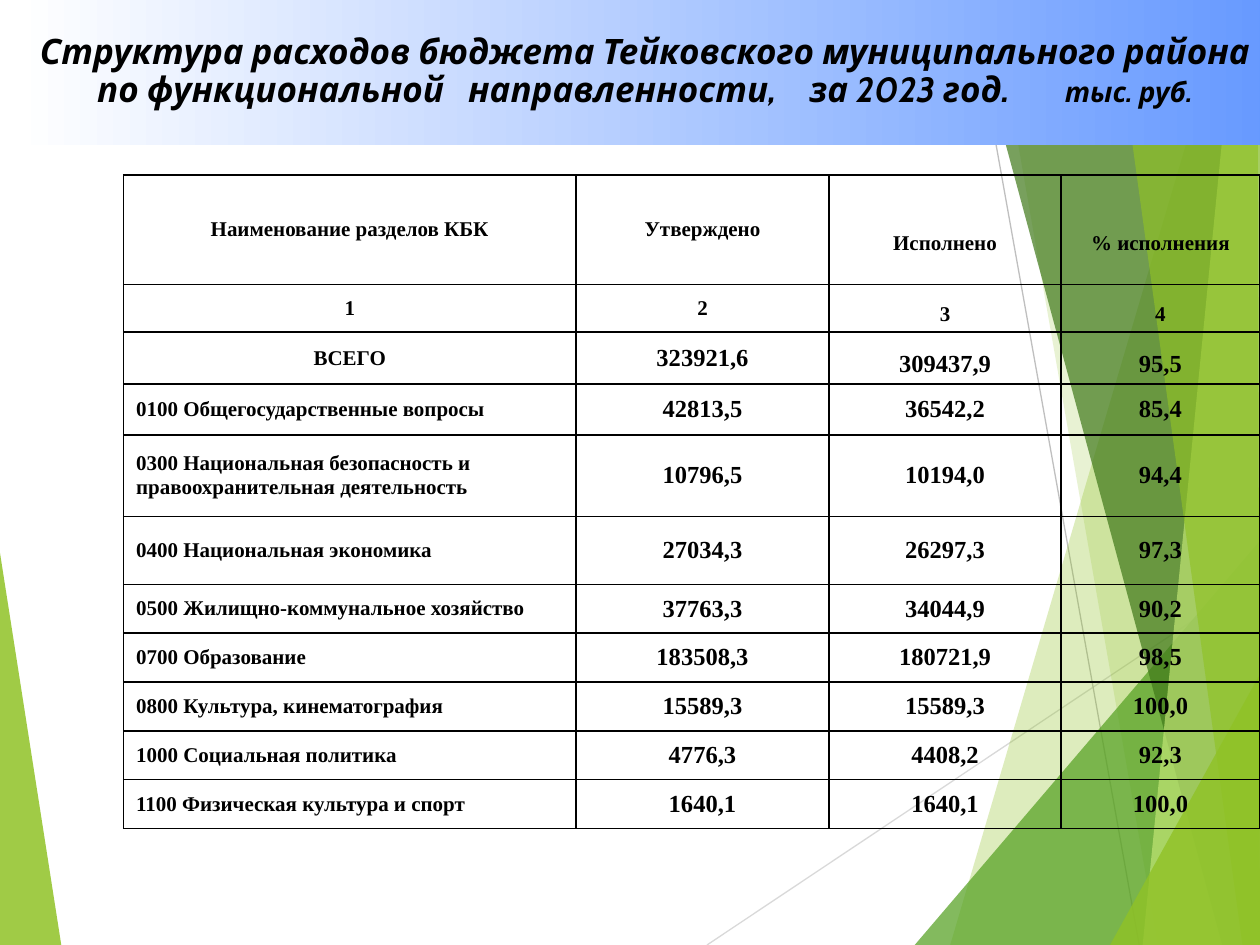
from lxml import etree
from pptx import Presentation
from pptx import util as u
from pptx.dml.color import RGBColor
from pptx.enum import shapes, text
from pptx.oxml.ns import qn

WIDTH, HEIGHT = 720, 540
COLORS = {
    "text": "000000", "white": "FFFFFF", "band": "6699FF",
    "lime": "90C226", "green": "54A021", "dark": "3F7819", "pale": "C0E474",
    "light gray": "D9D9D9", "gray": "BFBFBF",
}

# Outline points, colour, opacity in percent
FACETS_BACK = [
    ([(0, 316), (35, HEIGHT), (0, HEIGHT)], "lime", 85),
]
RAYS = [
    ((404, HEIGHT), (WIDTH, 329), "light gray"),
    ((554.4, 0), (651, HEIGHT), "gray"),
]
FACETS_FRONT = [
    ([(702, 0), (543, HEIGHT), (WIDTH, HEIGHT), (WIDTH, 0)], "lime", 30),
    ([(567.4, 0), (661.7, HEIGHT), (WIDTH, HEIGHT), (WIDTH, 0)], "lime", 20),
    ([(522.7, HEIGHT), (WIDTH, 309), (WIDTH, HEIGHT)], "green", 72),
    ([(552.4, 0), (698.4, HEIGHT), (WIDTH, HEIGHT), (WIDTH, 0)], "dark", 70),
    ([(706.3, 0), (653, HEIGHT), (WIDTH, HEIGHT), (WIDTH, 0)], "pale", 70),
    ([(635.8, 0), (710, HEIGHT), (WIDTH, HEIGHT), (718.6, 0)], "lime", 65),
    ([(634.3, HEIGHT), (WIDTH, 385.2), (WIDTH, HEIGHT)], "lime", 80),
]

# Each line: (words, size, extra width of the space that follows)
TITLE = [
    [("Структура расходов бюджета Тейковского муниципального района", 20, 0)],
    [("по функциональной", 20, 9), ("направленности,", 20, 14),
     ("за 2023 год.", 20, 27), ("тыс. руб.", 16, 0)],
]

COLUMN_WIDTHS = [258.5, 144.7, 132.5, 113.7]
ROW_HEIGHTS = [62.6, 27.1, 29.7, 29.1, 46.6, 38.9] + [27.9] * 5
HEADING_ROWS = 2
TOTAL_ROW = 2
BUDGET = [
    ["Наименование разделов КБК", "Утверждено", "Исполнено", "% исполнения"],
    ["1", "2", "3", "4"],
    ["ВСЕГО", "323921,6", "309437,9", "95,5"],
    ["0100 Общегосударственные вопросы", "42813,5", "36542,2", "85,4"],
    ["0300 Национальная безопасность и правоохранительная деятельность",
     "10796,5", "10194,0", "94,4"],
    ["0400 Национальная экономика", "27034,3", "26297,3", "97,3"],
    ["0500 Жилищно-коммунальное хозяйство", "37763,3", "34044,9", "90,2"],
    ["0700 Образование", "183508,3", "180721,9", "98,5"],
    ["0800 Культура, кинематография", "15589,3", "15589,3", "100,0"],
    ["1000 Социальная политика", "4776,3", "4408,2", "92,3"],
    ["1100 Физическая культура и спорт", "1640,1", "1640,1", "100,0"],
]


def rgb(name):
    return RGBColor.from_string(COLORS[name])


class BudgetSlide:
    title_font = "Cabin"
    table_font = "Times New Roman"

    def __init__(self, slide):
        self.slide = slide
        self.shapes = slide.shapes

    def facet(self, outline, color, opacity):
        points = [(u.Pt(x), u.Pt(y)) for x, y in outline]
        builder = self.shapes.build_freeform(*points[0])
        builder.add_line_segments(points[1:])
        facet = builder.convert_to_shape()
        facet.shadow.inherit = False
        facet.fill.solid()
        facet.fill.fore_color.rgb = rgb(color)
        facet.line.fill.background()
        fill_color = facet.fill._xPr.find(qn("a:solidFill"))[0]
        etree.SubElement(fill_color, qn("a:alpha"), val=str(opacity * 1000))

    def ray(self, start, end, color):
        ray = self.shapes.add_connector(
            shapes.MSO_CONNECTOR.STRAIGHT, *[u.Pt(v) for v in start + end])
        ray.line.color.rgb = rgb(color)
        ray.line.width = u.Pt(0.75)
        etree.SubElement(ray._element.spPr, qn("a:effectLst"))

    def style(self, paragraph, font, centered=True):
        paragraph.alignment = (
            text.PP_ALIGN.CENTER if centered else text.PP_ALIGN.LEFT)
        paragraph.font.name = font
        paragraph.font.bold = True
        paragraph.font.color.rgb = rgb("text")

    def title(self, lines):
        """Fill the title placeholder and bring it in front of the rest."""
        band = self.shapes.title
        band.left, band.top = u.Pt(8.6), u.Pt(0)
        band.width, band.height = u.Pt(WIDTH), u.Pt(82.8)
        band.fill.gradient()
        band.fill.gradient_angle = 0
        for stop, color, position in zip(
                band.fill.gradient_stops, ("white", "band"), (0, 1)):
            stop.color.rgb = rgb(color)
            stop.position = position

        frame = band.text_frame
        frame.word_wrap = True
        frame.auto_size = text.MSO_AUTO_SIZE.NONE
        frame.vertical_anchor = text.MSO_ANCHOR.MIDDLE
        for i, line in enumerate(lines):
            paragraph = frame.add_paragraph() if i else frame.paragraphs[0]
            self.style(paragraph, self.title_font)
            paragraph.font.italic = True
            paragraph.line_spacing = 0.9
            for words, size, gap in line:
                run = paragraph.add_run()
                run.text = words
                run.font.size = u.Pt(size)
                if gap:
                    space = paragraph.add_run()
                    space.text = " "
                    space.font.size = u.Pt(size)
                    space.font._element.set("spc", str(gap * 100))
        self.shapes._spTree.append(band._element)

    def border(self, cell):
        properties = cell._tc.get_or_add_tcPr()
        for side in ("a:lnL", "a:lnR", "a:lnT", "a:lnB"):
            edge = etree.SubElement(properties, qn(side), w=str(u.Pt(1)))
            fill = etree.SubElement(edge, qn("a:solidFill"))
            etree.SubElement(fill, qn("a:srgbClr"), val=COLORS["text"])

    def table(self, left, top, rows):
        table = self.shapes.add_table(
            len(rows), len(COLUMN_WIDTHS), u.Pt(left), u.Pt(top),
            u.Pt(sum(COLUMN_WIDTHS)), u.Pt(sum(ROW_HEIGHTS))).table
        table.first_row = table.horz_banding = False
        for column, width in zip(table.columns, COLUMN_WIDTHS):
            column.width = u.Pt(width)
        for row, height in zip(table.rows, ROW_HEIGHTS):
            row.height = u.Pt(height)
        for r, row in enumerate(rows):
            for c, words in enumerate(row):
                self.cell(table.cell(r, c), r, c, words)

    def cell(self, cell, r, c, words):
        is_section = r > TOTAL_ROW and c == 0
        is_figure = r >= HEADING_ROWS and c > 0
        at_bottom = r <= TOTAL_ROW and c >= 2
        self.border(cell)
        cell.fill.background()
        cell.vertical_anchor = (
            text.MSO_ANCHOR.BOTTOM if at_bottom else text.MSO_ANCHOR.MIDDLE)
        if r > TOTAL_ROW and is_figure:
            cell.margin_left = cell.margin_right = u.Pt(5.8)
            cell.margin_top = cell.margin_bottom = u.Pt(0)
        elif r == 0 and at_bottom:
            cell.margin_bottom = u.Pt(17)
        cell.text = words
        paragraph = cell.text_frame.paragraphs[0]
        self.style(paragraph, self.table_font, centered=not is_section)
        paragraph.font.size = u.Pt(14 if is_figure else 12)


def main():
    deck = Presentation()
    deck.slide_width, deck.slide_height = u.Pt(WIDTH), u.Pt(HEIGHT)
    title_only = deck.slide_layouts[5]
    page = BudgetSlide(deck.slides.add_slide(title_only))
    for facet in FACETS_BACK:
        page.facet(*facet)
    for ray in RAYS:
        page.ray(*ray)
    for facet in FACETS_FRONT:
        page.facet(*facet)
    page.table(70.6, 100, BUDGET)
    page.title(TITLE)
    deck.save("out.pptx")


if __name__ == "__main__":
    main()
